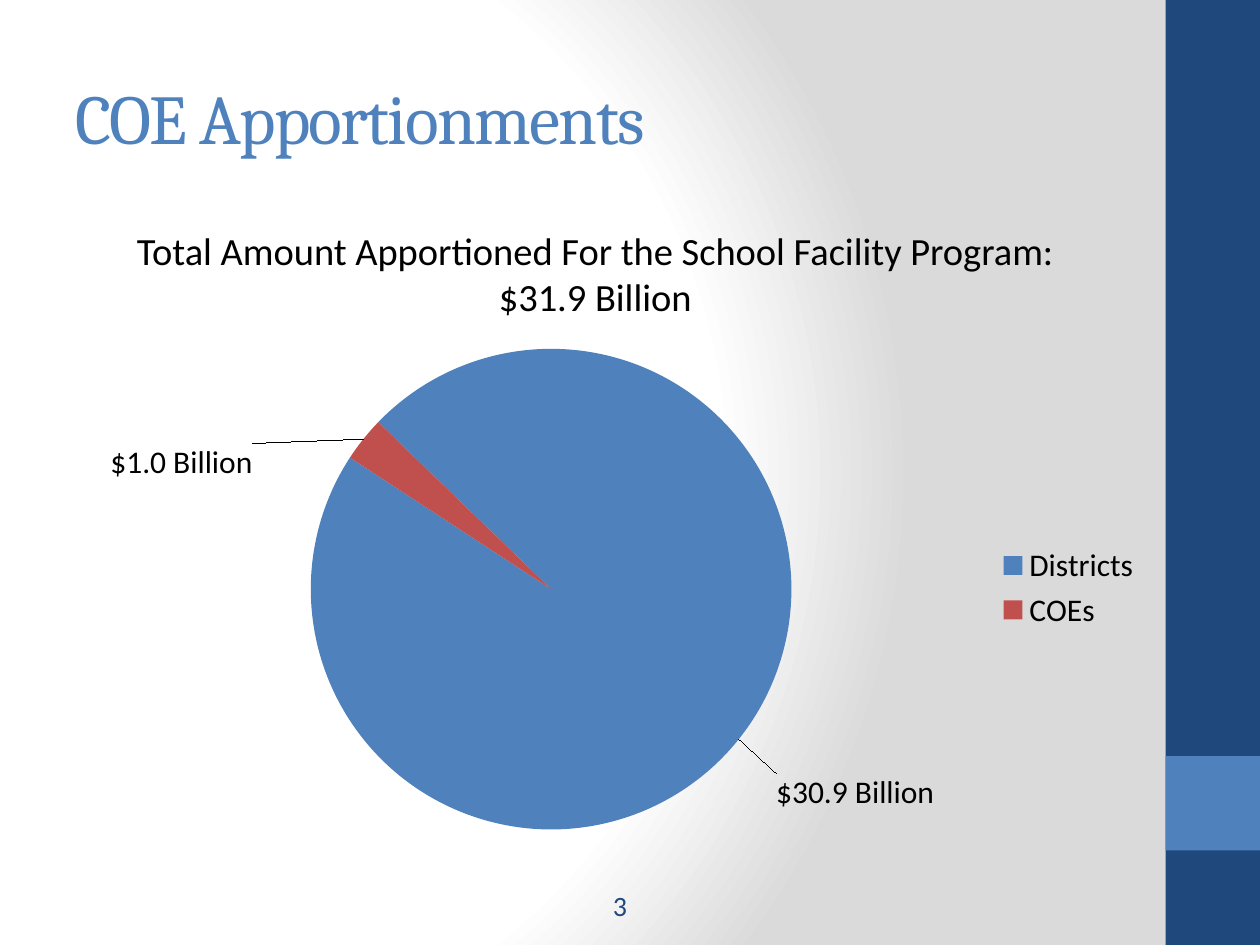
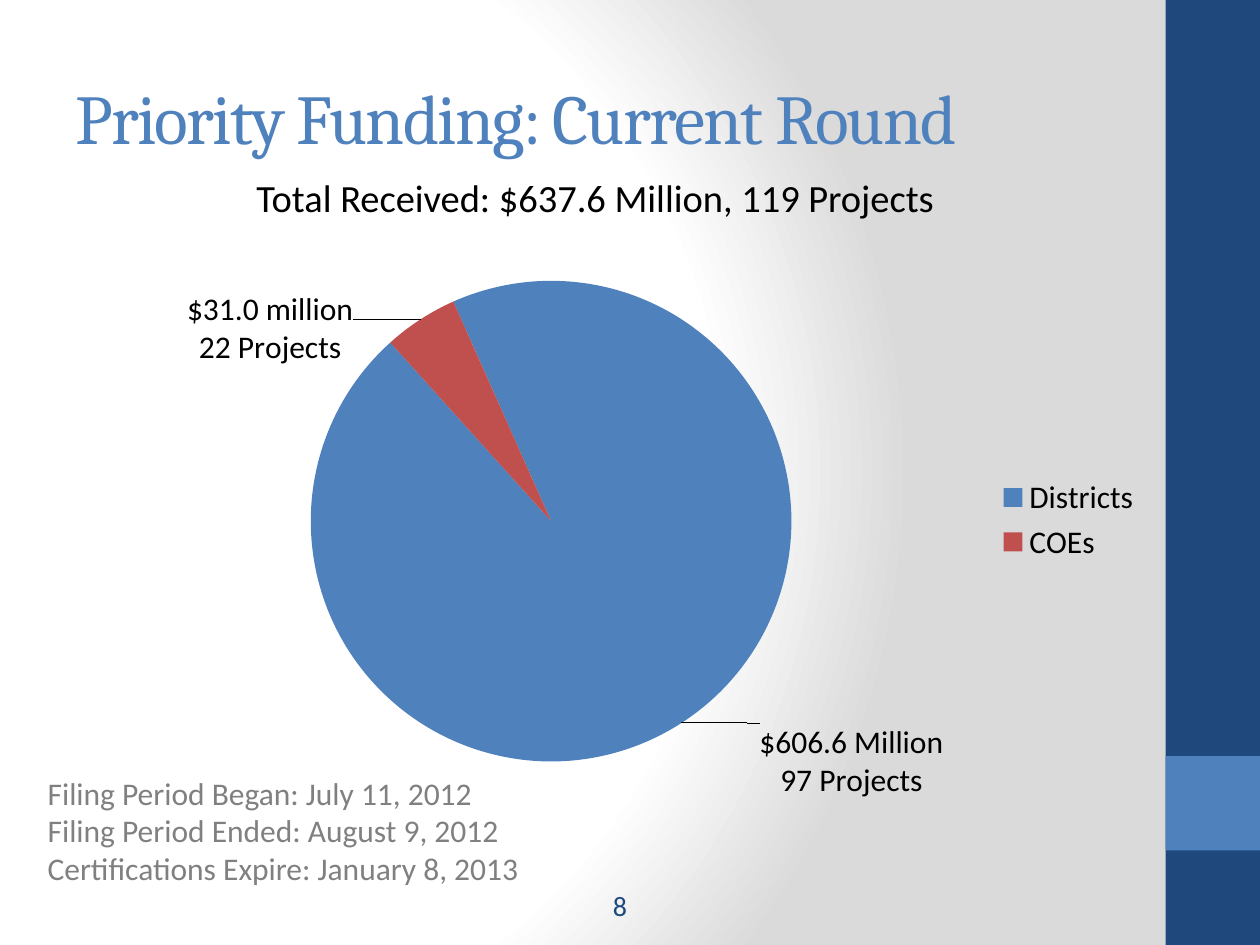
from lxml.etree import SubElement
from pptx import Presentation
from pptx.chart.data import CategoryChartData
from pptx.dml.color import RGBColor
from pptx.enum.chart import XL_CHART_TYPE, XL_LABEL_POSITION, XL_LEGEND_POSITION
from pptx.enum.shapes import MSO_SHAPE
from pptx.enum.text import MSO_ANCHOR, PP_ALIGN
from pptx.oxml import parse_xml
from pptx.oxml.ns import nsdecls, qn
from pptx.util import Inches, Pt

NAVY, BLUE, RED = "1F497D", "4F81BD", "C0504D"
BLACK, GRAY = "000000", "808080"
BODY_FONT, TITLE_FONT = "Calibri", "Cambria"

BACKGROUND_STOPS = [(0, "FFFFFF"), (75, "FFFFFF"), (100, "DADADA")]
BANDS = [(0, 7.5, NAVY), (6, 0.75, BLUE)]  # top, height, colour
PLOT_AREA = {"x": 0.168, "y": 0.094, "w": 0.515, "h": 0.817}

# Label offsets are fractions of the chart size
SLIDES = [
    {
        "title": "COE Apportionments",
        "number": "3",
        "summary": "Total Amount Apportioned For the School Facility Program: $31.9 Billion",
        "summary_top": 1.75,
        "summary_height": 5.25,
        "chart_top": 2.33,
        "shares": (97, 3),
        "start_angle": 314,
        "labels": [("$30.9 Billion", 0.03, 0.05), ("$1.0 Billion", -0.1, 0.08)],
        "dates": None,
    },
    {
        "title": "Priority Funding: Current Round",
        "number": "8",
        "summary": "Total Received: $637.6 Million, 119 Projects",
        "summary_top": 1.33,
        "summary_height": 5.42,
        "chart_top": 1.79,
        "shares": (95, 5),
        "start_angle": 336,
        "labels": [
            ("$606.6 Million\n97 Projects", 0.07, -0.01),
            ("$31.0 million\n22 Projects", -0.06, 0.09),
        ],
        "dates": "Filing Period Began: July 11, 2012\n"
                 "Filing Period Ended: August 9, 2012\n"
                 "Certifications Expire: January 8, 2013",
    },
]


def color(hex_string):
    return RGBColor.from_string(hex_string)


def write_text(frame, text, size, hex_color=BLACK, font=BODY_FONT, align=None,
               space_before=None, indent=None, spacing=None):
    frame.text = text
    for paragraph in frame.paragraphs:
        if align is not None:
            paragraph.alignment = align
        if space_before is not None:
            paragraph.space_before = Pt(space_before)
        if indent is not None:
            properties = paragraph._p.get_or_add_pPr()
            properties.set("marL", str(Inches(indent)))
            properties.set("indent", "0")
        for run in paragraph.runs:
            run.font.size = Pt(size)
            run.font.name = font
            run.font.color.rgb = color(hex_color)
            if spacing is not None:
                run._r.get_or_add_rPr().set("spc", str(spacing * 100))


presentation = Presentation()
presentation.slide_width = Inches(10)
presentation.slide_height = Inches(7.5)

# Shared radial background on the master
background_fill = presentation.slide_master.background.fill
background_fill.gradient()
gradient = background_fill._xPr.find(qn("a:gradFill"))
for child in list(gradient):
    gradient.remove(child)
stop_list = SubElement(gradient, qn("a:gsLst"))
for position, hex_color in BACKGROUND_STOPS:
    stop = SubElement(stop_list, qn("a:gs"), pos=str(position * 1000))
    SubElement(stop, qn("a:srgbClr"), val=hex_color)
circle = SubElement(gradient, qn("a:path"))
circle.set("path", "circle")
SubElement(circle, qn("a:fillToRect"), l="20000", t="50000", r="100000", b="50000")

for content in SLIDES:
    slide = presentation.slides.add_slide(presentation.slide_layouts[5])

    # Side bands
    for top, height, hex_color in BANDS:
        band = slide.shapes.add_shape(MSO_SHAPE.RECTANGLE, Inches(9.25), Inches(top),
                                      Inches(0.75), Inches(height))
        band.shadow.inherit = False
        band.fill.solid()
        band.fill.fore_color.rgb = color(hex_color)
        band.line.fill.background()

    # Title
    title = slide.shapes.title
    title.left, title.top = Inches(0.5), Inches(0.3)
    title.width, title.height = Inches(8.33), Inches(1.25)
    title.text_frame.vertical_anchor = MSO_ANCHOR.MIDDLE
    write_text(title.text_frame, content["title"], 40, BLUE, TITLE_FONT,
               align=PP_ALIGN.LEFT, spacing=-1)

    # Pie chart
    chart_data = CategoryChartData()
    chart_data.categories = ["Districts", "COEs"]
    chart_data.add_series("Series 1", content["shares"])
    chart = slide.shapes.add_chart(XL_CHART_TYPE.PIE, Inches(0.83), Inches(content["chart_top"]),
                                   Inches(8.33), Inches(4.67), chart_data).chart
    chart.has_title = False
    chart.font.size = Pt(18)
    chart.font.name = BODY_FONT
    chart.font.color.rgb = color(BLACK)
    chart.has_legend = True
    chart.legend.position = XL_LEGEND_POSITION.RIGHT
    chart.legend.include_in_layout = False
    plot = chart.plots[0]
    plot.vary_by_categories = True

    # Slices with their labels
    for index, (hex_color, (text, across, down)) in enumerate(zip((BLUE, RED), content["labels"])):
        point = plot.series[0].points[index]
        point.format.fill.solid()
        point.format.fill.fore_color.rgb = color(hex_color)
        label = point.data_label
        write_text(label.text_frame, text, 18)
        label.position = XL_LABEL_POSITION.OUTSIDE_END
        label_element = label._get_or_add_dLbl()
        for old_layout in label_element.findall(qn("c:layout")):
            label_element.remove(old_layout)
        label_element.insert(1, parse_xml(
            f'<c:layout {nsdecls("c")}><c:manualLayout>'
            f'<c:x val="{across}"/><c:y val="{down}"/></c:manualLayout></c:layout>'))

    # Plot position and first slice angle
    plot_area = chart._chartSpace.find(".//" + qn("c:plotArea"))
    for old_layout in plot_area.findall(qn("c:layout")):
        plot_area.remove(old_layout)
    sizes = "".join(f'<c:{key} val="{value}"/>' for key, value in PLOT_AREA.items())
    plot_area.insert(0, parse_xml(
        f'<c:layout {nsdecls("c")}><c:manualLayout><c:layoutTarget val="inner"/>'
        f'<c:xMode val="edge"/><c:yMode val="edge"/>{sizes}</c:manualLayout></c:layout>'))
    pie = plot_area.find(qn("c:pieChart"))
    angle = pie.find(qn("c:firstSliceAng"))
    if angle is None:
        angle = SubElement(pie, qn("c:firstSliceAng"))
    angle.set("val", str(content["start_angle"]))

    # Summary, filing dates and slide number
    centered = {"align": PP_ALIGN.CENTER}
    text_boxes = [
        (0.5, content["summary_top"], 8.33, content["summary_height"], content["summary"],
         {"size": 22, "space_before": 4.4, "indent": 0.12, **centered}),
        (0.28, 6.09, 5, 1.01, content["dates"], {"size": 18, "hex_color": GRAY}),
        (4.67, 7, 0.5, 0.42, content["number"],
         {"size": 16, "hex_color": NAVY, "space_before": 3.2, **centered}),
    ]
    for left, top, width, height, text, text_format in text_boxes:
        if text:
            box = slide.shapes.add_textbox(Inches(left), Inches(top), Inches(width), Inches(height))
            box.text_frame.word_wrap = True
            write_text(box.text_frame, text, **text_format)

presentation.save("out.pptx")
